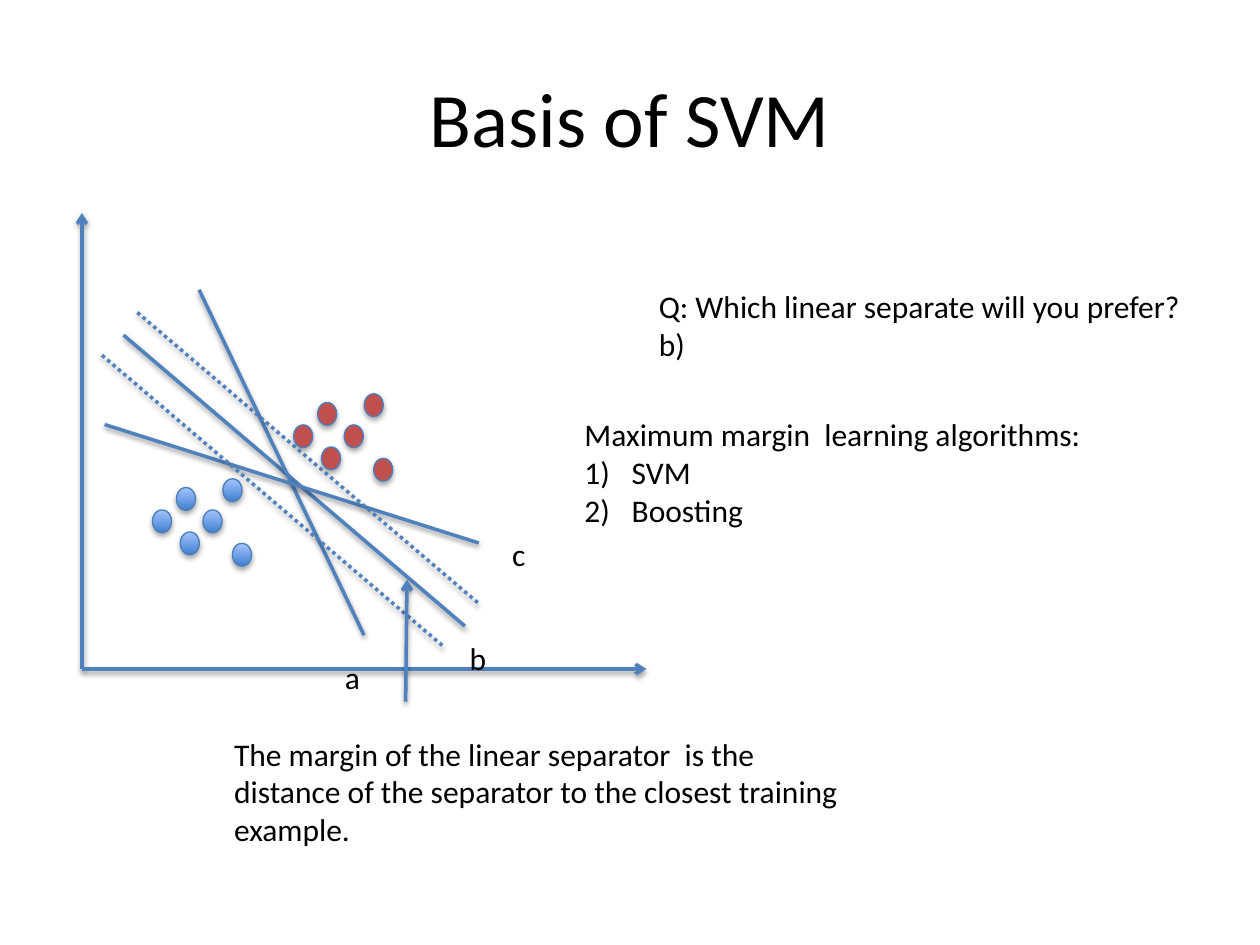
import pptx
import pptx.dml.color
import pptx.enum.dml
import pptx.enum.shapes
import pptx.enum.text
import pptx.oxml
import pptx.oxml.ns
import pptx.util

Pt = pptx.util.Pt
ALIGN = pptx.enum.text.PP_ALIGN
ANCHOR = pptx.enum.text.MSO_ANCHOR
NAMESPACE = pptx.oxml.ns.nsdecls("a")

FONT = "Calibri"
BLACK, BLUE, OUTLINE, RED = "000000", "4F81BD", "4B7EBC", "C0504D"
GRADIENT = ("3F80CE", "A4C4FF")

TITLE = ("Basis of SVM", (36, 21.6, 648, 90))
# Paragraphs, box, wraps, number of leading paragraphs before a numbered list
TEXTS = [
    (["Q: Which linear separate will you prefer?", "b)"],
     (369.4, 160.6, 316.8, 50.9), False, 2),
    (["a"], (190, 372.4, 23, 29), False, 1),
    (["b"], (261.3, 361.4, 23.8, 29), False, 1),
    (["c"], (285.6, 302.3, 22.3, 29), False, 1),
    (["The margin of the linear separator  is the distance of the separator "
      "to the closest training example."], (126.7, 416.2, 360, 72.7), True, 1),
    (["Maximum margin  learning algorithms:", "SVM", "Boosting"],
     (326.9, 233.7, 360, 72.7), True, 1),
]

# Start x, start y, end x, end y
ORIGIN = (46.8, 382.3)
AXES = [(*ORIGIN, 46.8, 121.7), (*ORIGIN, 369.4, 382.3)]
SEPARATORS = [
    (70.6, 191.5, 265.7, 357.8),
    (208, 362.9, 113.8, 165.6),
    (59.8, 242.6, 273.6, 310.3),
]
MARGINS = [(78.5, 178.6, 273.6, 344.9), (58.3, 203, 253.4, 369.4)]
MARGIN_POINTER = (231.8, 401, 232.6, 331.2)

# The red class repeats the blue cluster, shifted up and to the right
CLUSTER = [(87.1, 291.4), (103, 304), (100.8, 278.6),
           (116, 291.4), (127.4, 273.6), (132.8, 310.5)]
RED_SHIFT = (80.7, -48.6)
DOT_SIZE = (10.9, 13)


def rgb(color):
    return pptx.dml.color.RGBColor.from_string(color)


def add_shadow(shape, opacity, distance):
    """Give the shape a soft shadow straight below it."""
    shape._element.spPr.append(pptx.oxml.parse_xml(
        f'<a:effectLst {NAMESPACE}><a:outerShdw blurRad="{Pt(3.1)}" '
        f'dist="{Pt(distance)}" dir="5400000" rotWithShape="0">'
        f'<a:srgbClr val="{BLACK}"><a:alpha val="{opacity * 1000}"/></a:srgbClr>'
        '</a:outerShdw></a:effectLst>'))


def add_line(slide, ends, dotted=False, arrow=False):
    line = slide.shapes.add_connector(
        pptx.enum.shapes.MSO_CONNECTOR.STRAIGHT, *map(Pt, ends))
    line.line.color.rgb = rgb(BLUE)
    line.line.width = Pt(2)
    if dotted:
        line.line.dash_style = pptx.enum.dml.MSO_LINE.ROUND_DOT
    if arrow:
        line.line._get_or_add_ln().append(
            pptx.oxml.parse_xml(f'<a:tailEnd {NAMESPACE} type="arrow"/>'))
    add_shadow(line, 38, 1.6)


def add_dot(slide, left, top, fill=None):
    """Add a data point; without a fill colour it gets the blue gradient."""
    dot = slide.shapes.add_shape(
        pptx.enum.shapes.MSO_SHAPE.OVAL, *map(Pt, (left, top, *DOT_SIZE)))
    if fill:
        dot.fill.solid()
        dot.fill.fore_color.rgb = rgb(fill)
    else:
        dot.fill.gradient()
        dot.fill.gradient_angle = 90
        for stop, color in zip(dot.fill.gradient_stops, GRADIENT):
            stop.color.rgb = rgb(color)
    dot.line.color.rgb = rgb(OUTLINE)
    dot.line.width = Pt(0.75)
    add_shadow(dot, 35, 1.8)


def write_text(shape, paragraphs, size=18, align=ALIGN.LEFT, anchor=ANCHOR.TOP,
               wrap=True, plain=None):
    """Fill the shape; paragraphs after the first `plain` ones are numbered."""
    frame = shape.text_frame
    frame.text = "\n".join(paragraphs)
    frame.word_wrap = wrap
    frame.vertical_anchor = anchor
    for index, paragraph in enumerate(frame.paragraphs):
        paragraph.alignment = align
        font = paragraph.runs[0].font
        font.name, font.size, font.color.rgb = FONT, Pt(size), rgb(BLACK)
        if plain is not None and index >= plain:
            properties = paragraph._p.get_or_add_pPr()
            properties.set("marL", str(Pt(27)))
            properties.set("indent", str(-Pt(27)))
            properties.append(pptx.oxml.parse_xml(
                f'<a:buAutoNum {NAMESPACE} type="arabicParenR"/>'))


def place(shape, box):
    shape.left, shape.top, shape.width, shape.height = map(Pt, box)


def main():
    presentation = pptx.Presentation()
    presentation.slide_width, presentation.slide_height = Pt(720), Pt(540)
    slide = presentation.slides.add_slide(presentation.slide_layouts[5])

    title, title_box = TITLE
    place(slide.shapes.title, title_box)
    write_text(slide.shapes.title, [title], size=44, align=ALIGN.CENTER,
               anchor=ANCHOR.MIDDLE)

    for ends in AXES:
        add_line(slide, ends, arrow=True)
    for (shift_x, shift_y), fill in (((0, 0), None), (RED_SHIFT, RED)):
        for left, top in CLUSTER:
            add_dot(slide, left + shift_x, top + shift_y, fill)
    for ends in SEPARATORS:
        add_line(slide, ends)
    for ends in MARGINS:
        add_line(slide, ends, dotted=True)
    add_line(slide, MARGIN_POINTER, arrow=True)

    for paragraphs, box, wrap, plain in TEXTS:
        text_box = slide.shapes.add_textbox(*map(Pt, box))
        write_text(text_box, paragraphs, wrap=wrap, plain=plain)
        text_box.text_frame.auto_size = (
            pptx.enum.text.MSO_AUTO_SIZE.SHAPE_TO_FIT_TEXT)

    presentation.save("out.pptx")


if __name__ == "__main__":
    main()
